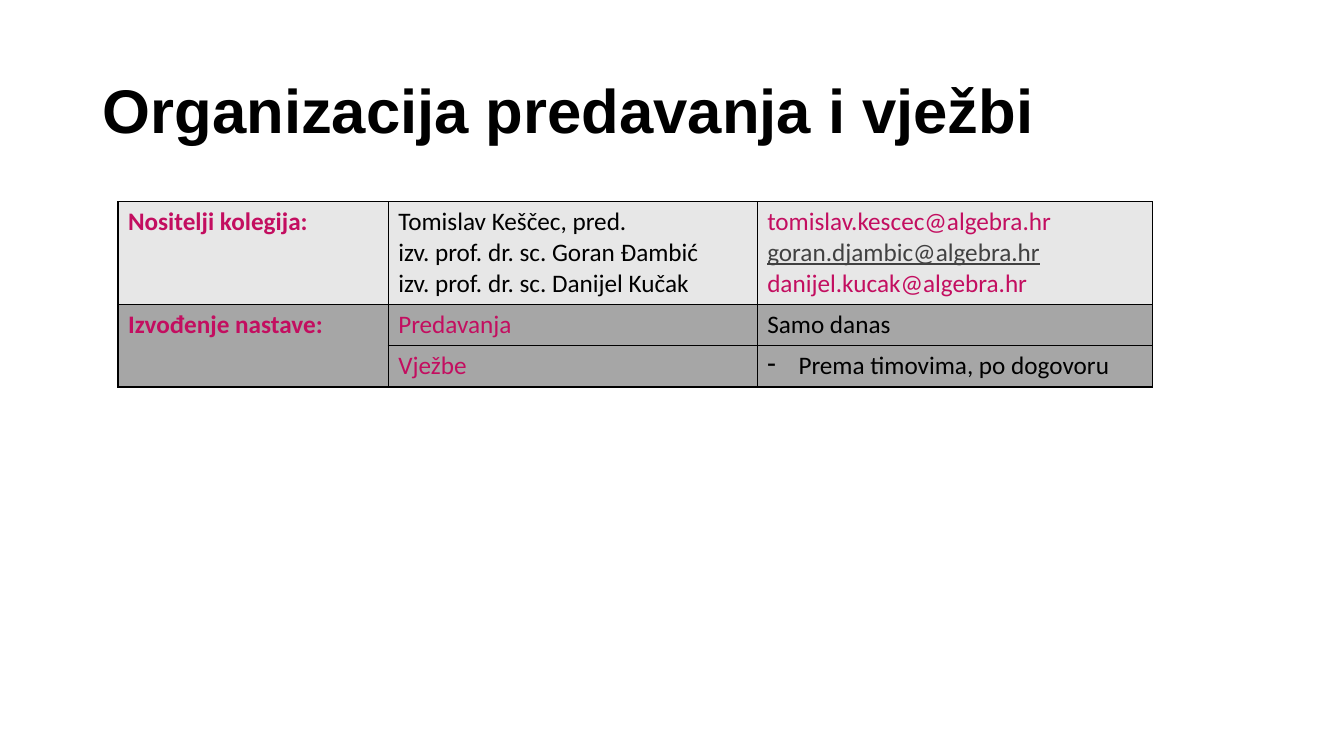
from lxml import etree
from pptx import Presentation
from pptx import util as u
from pptx.dml.color import RGBColor
from pptx.enum import text
from pptx.oxml import ns

WIDTH, HEIGHT = 13.33, 7.5
BLACK, PINK, DARK = "000000", "C30E60", "414141"
LIGHT_FILL, GREY_FILL = "E7E7E7", "A6A6A6"
COLUMNS = (2.68, 3.66, 3.92)
ROWS = (1.02, 0.41, 0.41)
ROW_FILLS = (LIGHT_FILL, GREY_FILL, GREY_FILL)

# Each cell is a list of (text, format) paragraphs.
LABEL = {"color": PINK, "bold": True}
COURSE_TABLE = (
    ([("Nositelji kolegija:", LABEL)],
     [("Tomislav Keščec, pred.", {}),
      ("izv. prof. dr. sc. Goran Đambić", {}),
      ("izv. prof. dr. sc. Danijel Kučak", {})],
     [("tomislav.kescec@algebra.hr", {"color": PINK}),
      ("goran.djambic@algebra.hr", {"color": DARK, "underline": True}),
      ("danijel.kucak@algebra.hr", {"color": PINK})]),
    ([("Izvođenje nastave:", LABEL)],
     [("Predavanja", {"color": PINK})],
     [("Samo danas", {})]),
    ([],
     [("Vježbe", {"color": PINK})],
     [("Prema timovima, po dogovoru", {"bullet": "-"})]),
)


def rgb(value):
    return RGBColor.from_string(value)


def add_bullet(paragraph, character, indent=0.31):
    properties = paragraph._p.get_or_add_pPr()
    properties.set("marL", str(u.Inches(indent)))
    properties.set("indent", str(u.Inches(-indent)))
    etree.SubElement(properties, ns.qn("a:buChar"), char=character)


def write(paragraph, content, size=18, font="Calibri", color=BLACK,
          bold=False, underline=False, bullet=None):
    if bullet:
        add_bullet(paragraph, bullet)
    run = paragraph.add_run()
    run.text = content
    run.font.size = u.Pt(size)
    run.font.name = font
    run.font.bold = bold
    run.font.underline = underline
    run.font.color.rgb = rgb(color)


def add_borders(cell, color=BLACK, width=1):
    properties = cell._tc.get_or_add_tcPr()
    for side in ("lnL", "lnR", "lnT", "lnB"):
        line = etree.SubElement(properties, ns.qn("a:" + side), w=str(u.Pt(width)))
        fill = etree.SubElement(line, ns.qn("a:solidFill"))
        etree.SubElement(fill, ns.qn("a:srgbClr"), val=color)


def fill_cell(cell, paragraphs, fill):
    add_borders(cell)
    cell.fill.solid()
    cell.fill.fore_color.rgb = rgb(fill)
    frame = cell.text_frame
    for index, (content, style) in enumerate(paragraphs):
        paragraph = frame.add_paragraph() if index else frame.paragraphs[0]
        write(paragraph, content, **style)


def place_title(slide, left, top, width, height):
    title = slide.shapes.title
    title.left, title.top = u.Inches(left), u.Inches(top)
    title.width, title.height = u.Inches(width), u.Inches(height)
    frame = title.text_frame
    frame.word_wrap = True
    frame.vertical_anchor = text.MSO_ANCHOR.MIDDLE
    paragraph = frame.paragraphs[0]
    paragraph.alignment = text.PP_ALIGN.LEFT
    paragraph.line_spacing = 0.9
    write(paragraph, "Organizacija predavanja i vježbi", size=44, font="Arial", bold=True)


def place_course_table(slide, left, top):
    table = slide.shapes.add_table(
        len(ROWS), len(COLUMNS), u.Inches(left), u.Inches(top),
        u.Inches(sum(COLUMNS)), u.Inches(sum(ROWS))).table
    table.first_row = table.horz_banding = False
    for column, width in zip(table.columns, COLUMNS):
        column.width = u.Inches(width)
    for row, height, fill, contents in zip(table.rows, ROWS, ROW_FILLS, COURSE_TABLE):
        row.height = u.Inches(height)
        for cell, paragraphs in zip(row.cells, contents):
            fill_cell(cell, paragraphs, fill)
    table.cell(1, 0).merge(table.cell(2, 0))


def main():
    presentation = Presentation()
    presentation.slide_width = u.Inches(WIDTH)
    presentation.slide_height = u.Inches(HEIGHT)
    slide = presentation.slides.add_slide(presentation.slide_layouts[5])
    place_title(slide, 0.92, 0.4, 11.5, 1.45)
    place_course_table(slide, 1.17, 2)
    presentation.save("out.pptx")


if __name__ == "__main__":
    main()
